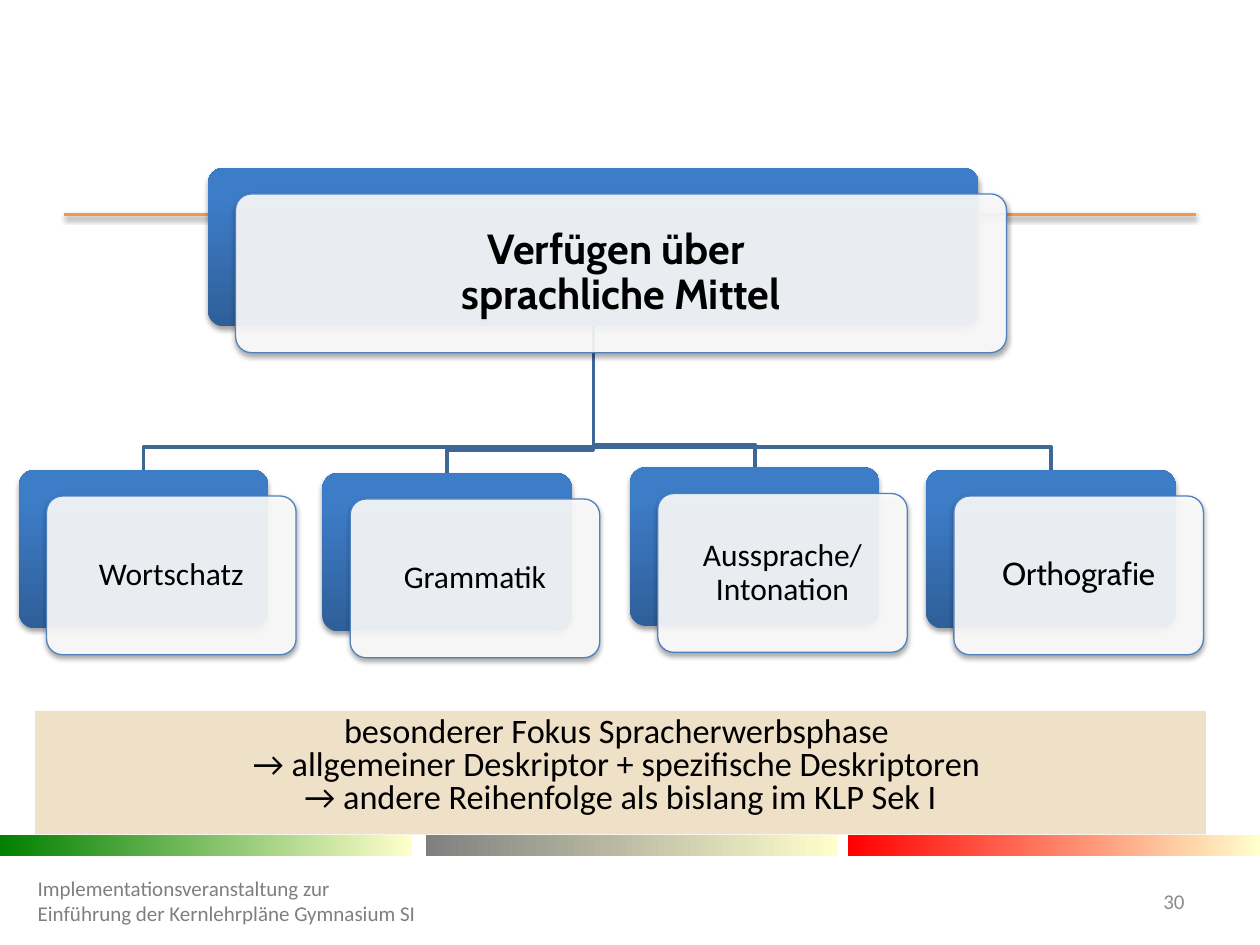
from lxml.etree import SubElement
from pptx import Presentation
from pptx.dml.color import RGBColor as Rgb
from pptx.enum.shapes import MSO_CONNECTOR as Link, MSO_SHAPE as Shape
from pptx.enum.text import MSO_ANCHOR as Anchor, PP_ALIGN as Align
from pptx.oxml.ns import qn
from pptx.util import Cm, Pt

COLOURS = {
    "orange": "F79646", "green": "008000", "grey": "808080", "red": "FF0000",
    "cream": "FFFFCC", "deep blue": "2F5F99", "blue": "3D7CC7",
    "edge": "4F81BD", "branch": "3F6797", "white": "FFFFFF", "sand": "EFE0C8",
    "black": "000000", "footer": "7F7F7F", "number": "8C8C8C",
}
PALETTE = {name: Rgb.from_string(value) for name, value in COLOURS.items()}


def blend(shape, start, finish, angle=0, end=1):
    shape.shadow.inherit = False
    shape.line.fill.background()
    shape.fill.gradient()
    shape.fill.gradient_angle = angle
    for stop, name, position in zip(shape.fill.gradient_stops, (start, finish), (0, end)):
        stop.color.rgb = PALETTE[name]
        stop.position = position


def cast_shadow(shape):
    properties = shape._element.spPr
    effects = properties.find(qn("a:effectLst"))
    if effects is None:
        effects = SubElement(properties, qn("a:effectLst"))
    shadow = SubElement(effects, qn("a:outerShdw"), blurRad=str(Pt(3.1)),
                        dist=str(Pt(1.7)), dir="5400000", rotWithShape="0")
    shade = SubElement(shadow, qn("a:srgbClr"), val=COLOURS["black"])
    SubElement(shade, qn("a:alpha"), val="36000")


deck = Presentation()
deck.slide_width, deck.slide_height = Cm(25.4), Cm(19.05)
page = deck.slides.add_slide(deck.slide_layouts[6])
shapes = page.shapes

rule = shapes.add_connector(Link.STRAIGHT, Cm(1.3), Cm(4.32), Cm(24.1), Cm(4.32))
rule.line.color.rgb = PALETTE["orange"]
rule.line.width = Pt(2)
cast_shadow(rule)

for left, name in ((0, "green"), (8.59, "grey"), (17.09, "red")):
    bar = shapes.add_shape(Shape.RECTANGLE, Cm(left), Cm(16.84), Cm(8.31), Cm(0.41))
    blend(bar, name, "cream")

card_height = 3.2
root_left, root_top, root_width = 4.19, 3.38, 15.54
child_width = 5.03
children = [
    ("Wortschatz", 0.38, 9.47, "Calibri"),
    ("Grammatik", 6.5, 9.53, "Calibri"),
    ("Aussprache/ Intonation", 12.7, 9.42, "Calibri"),
    ("Orthografie", 18.67, 9.47, "Cabin"),
]

trunk = root_left + root_width / 2
for label, left, top, font in reversed(children):
    middle, bend = left + child_width / 2, top - 0.46
    builder = shapes.build_freeform(Cm(trunk), Cm(root_top + card_height))
    corners = ((trunk, bend), (middle, bend), (middle, top))
    builder.add_line_segments([(Cm(x), Cm(y)) for x, y in corners], close=False)
    branch = builder.convert_to_shape()
    branch.shadow.inherit = False
    branch.fill.background()
    branch.line.color.rgb = PALETTE["branch"]
    branch.line.width = Pt(2)

texts = []
cards = [("Verfügen über \vsprachliche Mittel", root_left, root_top, root_width,
          "Cabin", 24, True, 0.25)]
cards += [(label, left, top, child_width, font, 18, False, 0.18)
          for label, left, top, font in children]
for label, left, top, width, font, size, bold, inset in cards:
    back = shapes.add_shape(Shape.ROUNDED_RECTANGLE, Cm(left), Cm(top),
                            Cm(width), Cm(card_height))
    blend(back, "deep blue", "blue", angle=90, end=0.8)
    front = shapes.add_shape(Shape.ROUNDED_RECTANGLE, Cm(left + 0.56), Cm(top + 0.53),
                             Cm(width), Cm(card_height))
    front.shadow.inherit = False
    front.fill.solid()
    front.fill.fore_color.rgb = PALETTE["white"]
    tint = front._element.spPr.find(qn("a:solidFill"))[0]
    SubElement(tint, qn("a:alpha"), val="90000")
    front.line.color.rgb = PALETTE["edge"]
    front.line.width = Pt(0.75)
    for card in (back, front):
        card.adjustments[0] = 0.1
        cast_shadow(card)
    frame = front.text_frame
    frame.margin_left = frame.margin_right = Cm(inset)
    frame.margin_top = frame.margin_bottom = Cm(inset)
    texts.append((front, label, font, size, bold, "black", Align.CENTER, 0.9, Anchor.MIDDLE))

focus = shapes.add_shape(Shape.RECTANGLE, Cm(0.71), Cm(14.33), Cm(23.6), Cm(2.49))
focus.shadow.inherit = False
focus.fill.solid()
focus.fill.fore_color.rgb = PALETTE["sand"]
focus.line.fill.background()
footer = shapes.add_textbox(Cm(0.51), Cm(17.65), Cm(8.23), Cm(1.02))
number = shapes.add_textbox(Cm(22.5), Cm(17.65), Cm(1.63), Cm(1.02))

message = ("besonderer Fokus Spracherwerbsphase \v"
           "→ allgemeiner Deskriptor + spezifische Deskriptoren \n"
           "→ andere Reihenfolge als bislang im KLP Sek I")
event = "Implementationsveranstaltung zur Einführung der Kernlehrpläne Gymnasium SI"
texts += [
    (focus, message, "Calibri", 19.6, False, "black", Align.CENTER, 0.8, Anchor.TOP),
    (footer, event, "Calibri", 12, False, "footer", Align.LEFT, 1.0, Anchor.MIDDLE),
    (number, "30", "Calibri", 12, False, "number", Align.RIGHT, 1.0, Anchor.MIDDLE),
]
for box, text, font, size, bold, colour, align, spacing, anchor in texts:
    frame = box.text_frame
    frame.word_wrap = True
    frame.vertical_anchor = anchor
    for index, line in enumerate(text.split("\n")):
        para = frame.add_paragraph() if index else frame.paragraphs[0]
        para.text = line
        para.alignment = align
        para.line_spacing = spacing
        for span in para.runs:
            span.font.name = font
            span.font.size = Pt(size)
            span.font.bold = bold
            span.font.color.rgb = PALETTE[colour]

deck.save("out.pptx")
